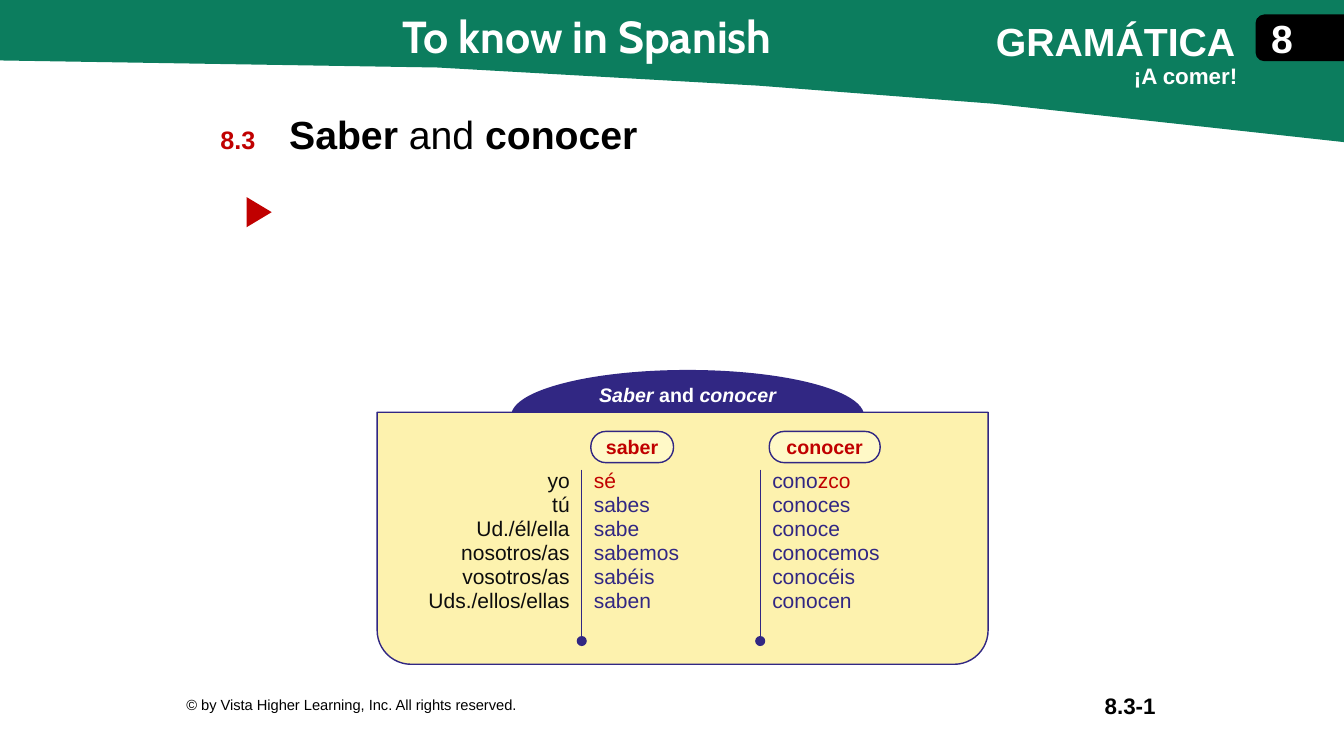
from dataclasses import dataclass

import pptx
import pptx.util
from lxml import etree
from pptx.dml.color import RGBColor
from pptx.enum.shapes import MSO_SHAPE
from pptx.enum.text import MSO_ANCHOR, PP_ALIGN
from pptx.oxml.ns import qn
from pptx.util import Inches, Pt


@dataclass(frozen=True)
class Theme:
    green: str = "0C7D5E"
    black: str = "000000"
    white: str = "FFFFFF"
    red: str = "C00000"
    indigo: str = "312783"
    cream: str = "FDF2AE"
    pale: str = "FFF9C7"
    ink: str = "0D0D0D"
    font: str = "Arial"
    title_font: str = "Cabin"
    title: float = 32
    heading: float = 28
    number: float = 18
    small: float = 16
    verb: float = 15
    label: float = 14
    copyright: float = 10.5


THEME = Theme()
NO_TABLE_STYLE = "{2D5ABB26-0587-4C30-8999-92F81FD0307C}"
PRONOUNS = ["yo", "tú", "Ud./él/ella", "nosotros/as", "vosotros/as", "Uds./ellos/ellas"]
SABER = ["sabes", "sabe", "sabemos", "sabéis", "saben"]
CONOCER = ["conoces", "conoce", "conocemos", "conocéis", "conocen"]
COLUMNS = [1.88, 1.77, 2.01]
ROWS = [0.42, 1.67]
TABLE_LEFT, TABLE_TOP = 3.89, 4.24


def box(left, top, width, height):
    return [Inches(value) for value in (left, top, width, height)]


def set_margins(target, left, top, right, bottom):
    target.margin_left, target.margin_top = Inches(left), Inches(top)
    target.margin_right, target.margin_bottom = Inches(right), Inches(bottom)


def write_runs(paragraph, runs, size, color, font=THEME.font, align=PP_ALIGN.LEFT):
    """Add (text, overrides) runs; overrides may hold color, bold and italic."""
    paragraph.alignment = align
    for text, overrides in runs:
        run = paragraph.add_run()
        run.text = text
        run.font.name = font
        run.font.size = Pt(size)
        run.font.bold = overrides.get("bold", False)
        run.font.italic = overrides.get("italic", False)
        run.font.color.rgb = RGBColor.from_string(overrides.get("color", color))


def add_text(slide, place, runs, size, color, font=THEME.font,
             align=PP_ALIGN.LEFT, anchor=MSO_ANCHOR.TOP):
    frame = slide.shapes.add_textbox(*box(*place)).text_frame
    frame.word_wrap = True
    frame.vertical_anchor = anchor
    write_runs(frame.paragraphs[0], runs, size, color, font, align)
    return frame


def paint(shape, fill, line=None):
    shape.shadow.inherit = False
    shape.fill.solid()
    shape.fill.fore_color.rgb = RGBColor.from_string(fill)
    if line:
        shape.line.color.rgb = RGBColor.from_string(line)
        shape.line.width = Pt(1)
    else:
        shape.line.fill.background()


def add_figure(slide, kind, place, fill, line=None, rotation=0, adjustments=()):
    figure = slide.shapes.add_shape(kind, *box(*place))
    paint(figure, fill, line)
    figure.rotation = rotation
    for index, value in enumerate(adjustments):
        figure.adjustments[index] = value
    return figure


def add_banner(slide):
    start, *outline = [(Inches(x), Inches(y)) for x, y in (
        (13.33, 1.41), (9.86, 1.03), (7.52, 0.85), (4.34, 0.67), (0, 0.6), (0, 0), (13.33, 0))]
    builder = slide.shapes.build_freeform(*start, scale=1.0)
    builder.add_line_segments(outline, close=True)
    paint(builder.convert_to_shape(), THEME.green)


def add_header(slide):
    bold = {"bold": True}
    add_text(slide, (1.95, 1.18, 0.82, 0.4), [("8.3", bold)], THEME.number, THEME.red,
             align=PP_ALIGN.CENTER, anchor=MSO_ANCHOR.MIDDLE)
    add_text(slide, (2.77, 1.05, 8.28, 0.57),
             [("Saber ", bold), ("and ", {}), ("conocer", bold)], THEME.heading, THEME.black)
    add_banner(slide)
    add_text(slide, (9.78, 0.12, 3.55, 0.57), [("GRAMÁTICA", bold)], THEME.heading, THEME.white)
    add_text(slide, (10.59, 0.57, 1.78, 0.37), [("¡A comer!", bold)], THEME.small,
             THEME.white, align=PP_ALIGN.RIGHT)
    add_figure(slide, MSO_SHAPE.ROUND_2_SAME_RECTANGLE, (12.67, -0.06, 0.45, 0.87),
               THEME.black, THEME.black, 270, (0.178, 0))
    chapter = add_text(slide, (12.54, 0.18, 0.35, 0.4), [("8", bold)], THEME.heading,
                       THEME.white, align=PP_ALIGN.CENTER, anchor=MSO_ANCHOR.MIDDLE)
    set_margins(chapter, 0, 0, 0, 0)
    add_figure(slide, MSO_SHAPE.ISOSCELES_TRIANGLE, (2.42, 1.98, 0.3, 0.25),
               THEME.red, rotation=90)
    add_text(slide, (3.89, 0.04, 4.18, 0.64), [("To know in Spanish", bold)],
             THEME.title, THEME.white, THEME.title_font)


def add_footer(slide):
    add_text(slide, (8.55, 6.82, 3.01, 0.35), [("8.3-1", {"bold": True})], THEME.small,
             THEME.black, align=PP_ALIGN.RIGHT, anchor=MSO_ANCHOR.MIDDLE)
    add_text(slide, (1.75, 6.82, 6.45, 0.35),
             [("© by Vista Higher Learning, Inc. All rights reserved.", {})],
             THEME.copyright, THEME.black, anchor=MSO_ANCHOR.MIDDLE)


def add_panel(slide):
    dome = add_figure(slide, MSO_SHAPE.OVAL, (5.07, 3.67, 3.5, 0.91), THEME.indigo)
    caption = dome.text_frame
    caption.vertical_anchor = MSO_ANCHOR.TOP
    set_margins(caption, 0.1, 0, 0.1, 0.4)
    slanted = {"bold": True, "italic": True}
    write_runs(caption.paragraphs[0],
               [("Saber ", slanted), ("and ", {"bold": True}), ("conocer", slanted)],
               THEME.label, THEME.white, align=PP_ALIGN.CENTER)
    add_figure(slide, MSO_SHAPE.ROUND_2_SAME_RECTANGLE, (3.74, 4.09, 6.06, 2.5),
               THEME.cream, THEME.indigo, 180, (0.135, 0))


def add_border(cell, side):
    """Draw one side of a cell; side is lnL or lnR."""
    line = etree.SubElement(cell._tc.get_or_add_tcPr(), qn("a:" + side), w=str(Pt(1)))
    fill = etree.SubElement(line, qn("a:solidFill"))
    etree.SubElement(fill, qn("a:srgbClr"), val=THEME.indigo)


def fill_cell(cell, lines, color, align):
    for index, runs in enumerate(lines):
        paragraph = cell.text_frame.paragraphs[0] if index == 0 else cell.text_frame.add_paragraph()
        write_runs(paragraph, runs, THEME.verb, color, align=align)
        paragraph.space_after = Pt(0.4)


def add_conjugations(slide):
    frame = slide.shapes.add_table(
        len(ROWS), len(COLUMNS), *box(TABLE_LEFT, TABLE_TOP, sum(COLUMNS), sum(ROWS)))
    table = frame.table
    table.first_row = table.horz_banding = False
    table._tbl.tblPr.find(qn("a:tableStyleId")).text = NO_TABLE_STYLE
    for column, width in zip(table.columns, COLUMNS):
        column.width = Inches(width)
    for row, height in zip(table.rows, ROWS):
        row.height = Inches(height)

    red = {"color": THEME.red}
    contents = [
        ([[(word, {})] for word in PRONOUNS], THEME.ink, PP_ALIGN.RIGHT),
        ([[("sé", red)]] + [[(word, {})] for word in SABER], THEME.indigo, PP_ALIGN.LEFT),
        ([[("cono", {}), ("zco", red)]] + [[(word, {})] for word in CONOCER],
         THEME.indigo, PP_ALIGN.LEFT),
    ]
    for index, content in enumerate(contents):
        cell = table.cell(1, index)
        set_margins(cell, 0.12, 0, 0.12, 0.05)
        fill_cell(cell, *content)
        if index > 0:
            add_border(cell, "lnL")
        if index < len(COLUMNS) - 1:
            add_border(cell, "lnR")
    for cell in table.iter_cells():
        cell.fill.background()


def add_verb_markers(slide):
    """Put a verb label above each column rule and a dot at its foot."""
    dot = 0.1
    for index, (verb, width) in enumerate((("saber", 0.82), ("conocer", 1.1)), start=1):
        rule = TABLE_LEFT + sum(COLUMNS[:index])
        add_figure(slide, MSO_SHAPE.OVAL, (rule - dot / 2, 6.31, dot, dot), THEME.indigo)
        label = add_figure(slide, MSO_SHAPE.ROUNDED_RECTANGLE, (rule + 0.09, 4.28, width, 0.31),
                           THEME.pale, THEME.indigo, adjustments=(0.481,))
        label.text_frame.vertical_anchor = MSO_ANCHOR.MIDDLE
        set_margins(label.text_frame, 0, 0, 0, 0)
        write_runs(label.text_frame.paragraphs[0], [(verb, {"bold": True})],
                   THEME.label, THEME.red, align=PP_ALIGN.CENTER)


def main():
    deck = pptx.Presentation()
    deck.slide_width, deck.slide_height = Inches(13.33), Inches(7.5)
    slide = deck.slides.add_slide(deck.slide_layouts[6])
    add_header(slide)
    add_footer(slide)
    add_panel(slide)
    add_conjugations(slide)
    add_verb_markers(slide)
    deck.save("out.pptx")


if __name__ == "__main__":
    main()
